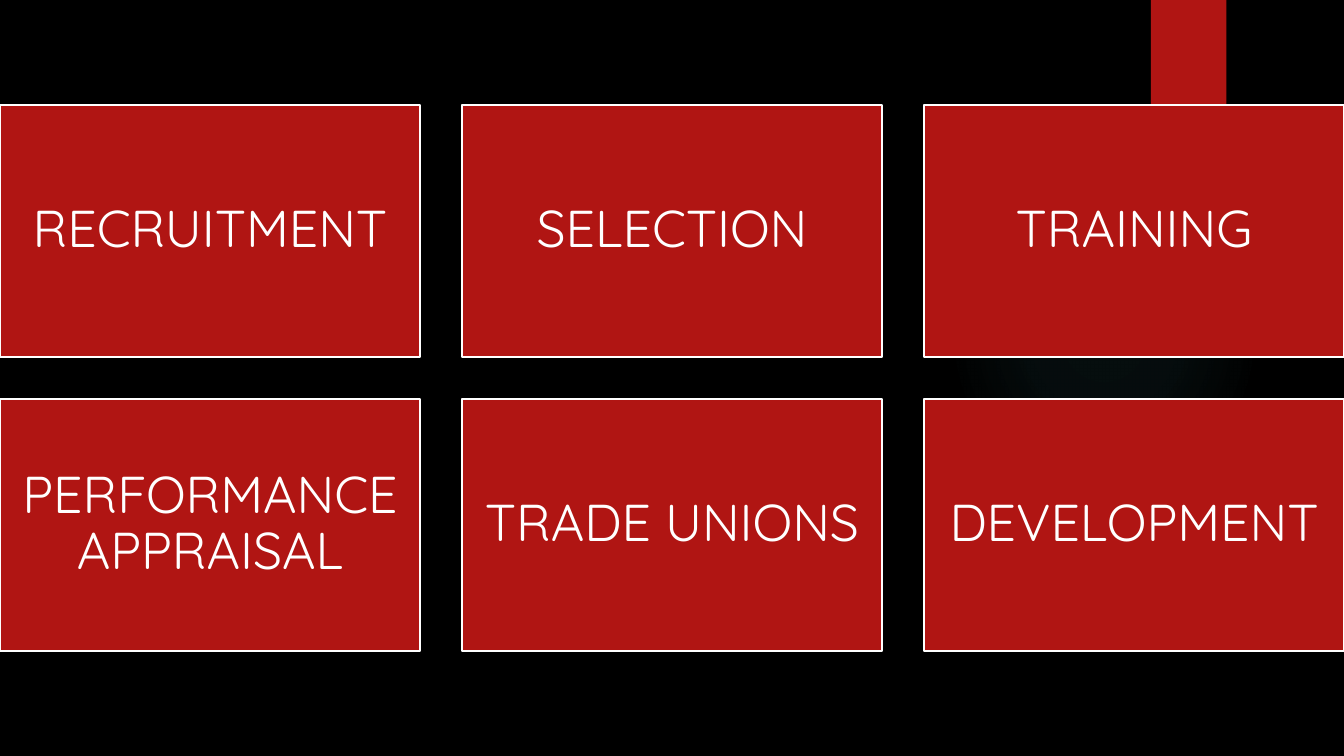
import lxml.etree
import pptx
import pptx.dml.color
import pptx.enum.shapes
import pptx.enum.text
import pptx.oxml
import pptx.oxml.ns
import pptx.util

COLUMNS, ROWS = 32, 18
CARD_COLUMNS, CARD_ROWS, GAP = 10, 6, 1
CARDS_TOP = 2.5
TOPICS = [
    ["RECRUITMENT", "SELECTION", "TRAINING"],
    ["PERFORMANCE APPRAISAL", "TRADE UNIONS", "DEVELOPMENT"],
]


def color(value):
    return pptx.dml.color.RGBColor.from_string(value)


class SlideBuilder:
    """Draws styled elements on one slide, placed in grid columns and rows."""

    font_name = "Quicksand"
    font_size = 37
    red, white, black, teal = "B01513", "FFFFFF", "000000", "50B9C1"

    def __init__(self, presentation):
        self.column = presentation.slide_width / COLUMNS
        self.row = presentation.slide_height / ROWS
        self.slide = presentation.slides.add_slide(presentation.slide_layouts[6])
        background = self.slide.background.fill
        background.solid()
        background.fore_color.rgb = color(self.black)

    def shape(self, kind, left, top, width, height):
        shape = self.slide.shapes.add_shape(
            kind,
            round(left * self.column),
            round(top * self.row),
            round(width * self.column),
            round(height * self.row),
        )
        shape.shadow.inherit = False
        shape.line.fill.background()
        return shape

    def rectangle(self, left, top, width, height):
        kind = pptx.enum.shapes.MSO_SHAPE.RECTANGLE
        shape = self.shape(kind, left, top, width, height)
        shape.fill.solid()
        shape.fill.fore_color.rgb = color(self.red)
        return shape

    def glow(self, left, top, size, stops):
        shape = self.shape(pptx.enum.shapes.MSO_SHAPE.OVAL, left, top, size, size)
        stop_xml = "".join(
            f'<a:gs pos="{position * 1000}"><a:srgbClr val="{self.teal}">'
            f'<a:alpha val="{opacity * 1000}"/></a:srgbClr></a:gs>'
            for position, opacity in stops
        )
        gradient = pptx.oxml.parse_xml(
            f'<a:gradFill {pptx.oxml.ns.nsdecls("a")}><a:gsLst>{stop_xml}</a:gsLst>'
            '<a:path path="circle"><a:fillToRect l="50000" t="50000" r="50000" b="50000"/>'
            "</a:path></a:gradFill>"
        )
        shape._element.spPr.find(pptx.oxml.ns.qn("a:prstGeom")).addnext(gradient)

    def ribbon(self, left, width, height):
        shape = self.rectangle(left, 0, width, height)
        effects = shape._element.spPr.find(pptx.oxml.ns.qn("a:effectLst"))
        effects.append(pptx.oxml.parse_xml(
            f'<a:outerShdw {pptx.oxml.ns.nsdecls("a")} blurRad="38100" dist="25400" '
            f'dir="5400000"><a:srgbClr val="{self.black}"><a:alpha val="45000"/>'
            "</a:srgbClr></a:outerShdw>"
        ))

    def card(self, left, top, text):
        shape = self.rectangle(left, top, CARD_COLUMNS, CARD_ROWS)
        shape.line.color.rgb = color(self.white)
        shape.line.width = pptx.util.Pt(1.5)
        frame = shape.text_frame
        frame.word_wrap = True
        frame.vertical_anchor = pptx.enum.text.MSO_ANCHOR.MIDDLE
        for side in ("left", "top", "right", "bottom"):
            setattr(frame, f"margin_{side}", pptx.util.Inches(0.15))
        paragraph = frame.paragraphs[0]
        paragraph.text = text
        paragraph.alignment = pptx.enum.text.PP_ALIGN.CENTER
        paragraph.line_spacing = 0.9
        paragraph.font.name = self.font_name
        paragraph.font.size = pptx.util.Pt(self.font_size)
        paragraph.font.color.rgb = color(self.white)


def main():
    presentation = pptx.Presentation()
    presentation.slide_width = pptx.util.Inches(13.33)
    presentation.slide_height = pptx.util.Inches(7.5)
    builder = SlideBuilder(presentation)
    builder.glow(22.58, 4.4, 7.4, [(0, 7), (36, 6), (69, 0), (100, 0)])
    builder.ribbon(27.4, 1.8, 3)
    for row, topics in enumerate(TOPICS):
        for column, topic in enumerate(topics):
            left = column * (CARD_COLUMNS + GAP)
            top = CARDS_TOP + row * (CARD_ROWS + GAP)
            builder.card(left, top, topic)
    presentation.save("out.pptx")


if __name__ == "__main__":
    main()
